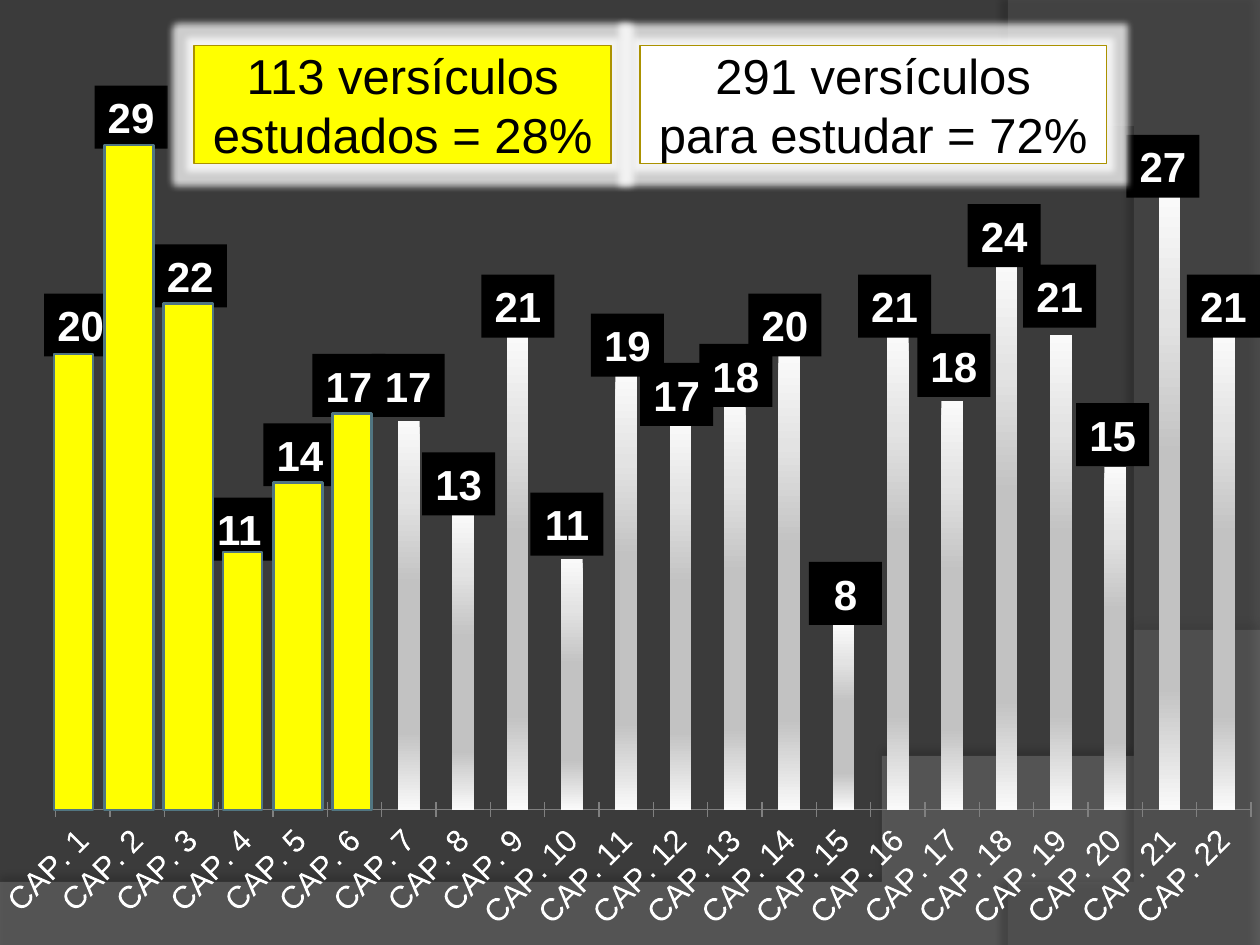
from pptx import Presentation
from pptx.chart.data import CategoryChartData
from pptx.dml.color import RGBColor
from pptx.enum.chart import XL_CHART_TYPE as ChartType, XL_TICK_MARK as TickMark
from pptx.enum.shapes import MSO_SHAPE as Preset
from pptx.enum.text import MSO_ANCHOR as Anchor, PP_ALIGN as Align
from pptx.oxml import parse_xml
from pptx.oxml.ns import nsdecls
from pptx.util import Inches, Pt

FONT = "Arial"
BACKGROUND = RGBColor(0x3B, 0x3B, 0x3B)
LOWER_WAVE = RGBColor(0x7F, 0x7F, 0x7F)
RIGHT_WAVE = RGBColor(0x5E, 0x5E, 0x5E)
AXIS = RGBColor(0x80, 0x80, 0x80)
BLACK = RGBColor(0, 0, 0)
WHITE = RGBColor(0xFF, 0xFF, 0xFF)
YELLOW = RGBColor(0xFF, 0xFF, 0)
BAR_LINE = RGBColor(0x51, 0x76, 0x82)
BANNER_LINE = RGBColor(0xAB, 0x92, 0)

BASELINE = 6.43
PERCENTAGES = [69, 100, 76, 38, 48, 59, 59, 45, 72, 38, 66,
               59, 62, 69, 28, 72, 62, 83, 72, 52, 93, 72]
BAR_GRADIENT = [(0, "FAFAFA"), (20, "E3E3E3"), (42, "C2C2C2"),
                (80, "C2C2C2"), (100, "FAFAFA")]
VERSE_LABELS = [
    (20, 0.35, 2.33), (29, 0.75, 0.68), (22, 1.22, 1.94), (11, 1.61, 3.95),
    (14, 2.09, 3.36), (17, 2.48, 2.81), (17, 2.95, 2.81), (13, 3.35, 3.59),
    (21, 3.82, 2.18), (11, 4.21, 3.91), (19, 4.69, 2.49), (17, 5.08, 2.88),
    (18, 5.55, 2.73), (20, 5.94, 2.33), (8, 6.42, 4.46), (21, 6.81, 2.18),
    (18, 7.28, 2.65), (24, 7.68, 1.62), (21, 8.12, 2.1), (15, 8.54, 3.2),
    (27, 8.94, 1.07), (21, 9.42, 2.18),
]
STUDIED_BARS = [(0.43, 2.81, 0.31), (0.83, 1.15, 0.39), (1.3, 2.41, 0.39),
                (1.77, 4.38, 0.31), (2.17, 3.83, 0.39), (2.64, 3.28, 0.31)]


def add_effect(shape, xml):
    shape.shadow.inherit = False
    effects = shape._element.spPr.find("{*}effectLst")
    effects.append(parse_xml(xml))


def curve(start, control_1, control_2, end, steps=40):
    points = []
    for step in range(1, steps + 1):
        t = step / steps
        weights = ((1 - t) ** 3, 3 * t * (1 - t) ** 2, 3 * t ** 2 * (1 - t), t ** 3)
        corners = (start, control_1, control_2, end)
        points.append(tuple(sum(w * corner[axis] for w, corner in zip(weights, corners))
                            for axis in (0, 1)))
    return points


def add_wave(slide, points, color, opacity, shadow_opacity, blur, distance, angle):
    builder = slide.shapes.build_freeform(*points[0], scale=Inches(1))
    builder.add_line_segments(points[1:], close=True)
    shape = builder.convert_to_shape()
    shape.fill.solid()
    shape.fill.fore_color.rgb = color
    shape.line.fill.background()
    color_element = shape._element.spPr.find("{*}solidFill")[0]
    color_element.append(parse_xml(f'<a:alpha {nsdecls("a")} val="{opacity * 1000}"/>'))
    add_effect(shape, f'<a:outerShdw {nsdecls("a")} blurRad="{Pt(blur)}" dist="{Pt(distance)}" '
                      f'dir="{angle * 60000}" algn="ctr" rotWithShape="0"><a:srgbClr val="000000">'
                      f'<a:alpha val="{shadow_opacity * 1000}"/></a:srgbClr></a:outerShdw>')


def add_background(slide):
    slide.background.fill.solid()
    slide.background.fill.fore_color.rgb = BACKGROUND
    lower = [(0, 7.05), (0, 7.5), (10, 7.5), (10, 5.2)]
    lower += curve((10, 5.2), (5.59, 7.29), (3.91, 7.19), (0, 7.05))
    add_wave(slide, lower, LOWER_WAVE, 45, 35, 4, 3.5, 270)
    right = [(10, 0.02), (10, 7.5), (8.21, 7.5)]
    right += curve((8.21, 7.5), (9.35, 6.19), (10.18, 3), (8, 0))
    add_wave(slide, right, RIGHT_WAVE, 40, 45, 4, 4, 180)


def add_chapter_chart(slide, left, top, width, height):
    data = CategoryChartData()
    data.categories = [f"CAP. {number}" for number in range(1, len(PERCENTAGES) + 1)]
    data.add_series("Series 1", PERCENTAGES)
    chart = slide.shapes.add_chart(ChartType.COLUMN_CLUSTERED, Inches(left), Inches(top),
                                   Inches(width), Inches(height), data).chart
    chart.has_legend = False
    chart.has_title = False
    chart.font.name = FONT
    chart.font.size = Pt(18)
    chart.font.color.rgb = WHITE
    value_axis = chart.value_axis
    value_axis.minimum_scale = 0
    value_axis.maximum_scale = 120
    value_axis.has_major_gridlines = False
    value_axis.visible = False
    category_axis = chart.category_axis
    category_axis.major_tick_mark = TickMark.CROSS
    category_axis.format.line.color.rgb = AXIS
    category_axis.tick_labels.font.size = Pt(18)
    category_axis._element.txPr.bodyPr.set("rot", "-2700000")
    plot = chart.plots[0]
    plot.gap_width = 150
    plot.vary_by_categories = False
    fill = plot.series[0].format.fill
    fill.gradient()
    fill.gradient_angle = 270
    stops = plot.series[0]._element.spPr.find("{*}gradFill").find("{*}gsLst")
    for stop in list(stops):
        stops.remove(stop)
    for position, color in BAR_GRADIENT:
        stops.append(parse_xml(f'<a:gs {nsdecls("a")} pos="{position * 1000}">'
                               f'<a:srgbClr val="{color}"/></a:gs>'))
    plot_area = chart._chartSpace.chart.plotArea
    for layout in plot_area.findall("{*}layout"):
        plot_area.remove(layout)
    frame = "".join(f'<c:{name} val="{value}"/>' for name, value in (
        ("layoutTarget", "inner"), ("xMode", "edge"), ("yMode", "edge"),
        ("x", 0.04), ("y", 0.02), ("w", 0.953), ("h", 0.837)))
    plot_area.insert(0, parse_xml(f'<c:layout {nsdecls("c")}><c:manualLayout>{frame}'
                                  f'</c:manualLayout></c:layout>'))


def add_box(slide, left, top, width, height, color, line_color=None, line_width=0):
    shape = slide.shapes.add_shape(Preset.RECTANGLE, Inches(left), Inches(top),
                                   Inches(width), Inches(height))
    shape.shadow.inherit = False
    shape.fill.solid()
    shape.fill.fore_color.rgb = color
    if line_color is None:
        shape.line.fill.background()
    else:
        shape.line.color.rgb = line_color
        shape.line.width = Pt(line_width)
    return shape


def write_lines(shape, lines, size, color, bold, anchor):
    frame = shape.text_frame
    frame.vertical_anchor = anchor
    frame.word_wrap = False
    frame.text = "\n".join(lines)
    for paragraph in frame.paragraphs:
        paragraph.alignment = Align.CENTER
        paragraph.font.name = FONT
        paragraph.font.size = Pt(size)
        paragraph.font.bold = bold
        paragraph.font.color.rgb = color


def add_verse_label(slide, verses, left, top):
    shape = add_box(slide, left, top, 0.58, 0.5, BLACK)
    write_lines(shape, [str(verses)], 24, WHITE, True, Anchor.TOP)


def add_banner(slide, left, top, width, height, color, lines):
    shape = add_box(slide, left, top, width, height, color, BANNER_LINE, 0.75)
    add_effect(shape, f'<a:glow {nsdecls("a")} rad="{Pt(8)}"><a:srgbClr val="FFFFFF">'
                      f'<a:alpha val="75000"/></a:srgbClr></a:glow>')
    write_lines(shape, lines, 28, BLACK, False, Anchor.MIDDLE)


def main():
    presentation = Presentation()
    presentation.slide_width = Inches(10)
    presentation.slide_height = Inches(7.5)
    slide = presentation.slides.add_slide(presentation.slide_layouts[6])
    add_background(slide)
    add_chapter_chart(slide, 0, 0, 10, 7.5)
    for verses, left, top in VERSE_LABELS:
        add_verse_label(slide, verses, left, top)
    for left, top, width in STUDIED_BARS:
        add_box(slide, left, top, width, BASELINE - top, YELLOW, BAR_LINE, 1.5)
    add_banner(slide, 1.54, 0.36, 3.31, 0.94, YELLOW, ["113 versículos", "estudados = 28%"])
    add_banner(slide, 5.08, 0.36, 3.7, 0.94, WHITE, ["291 versículos", "para estudar = 72%"])
    presentation.save("out.pptx")


if __name__ == "__main__":
    main()
